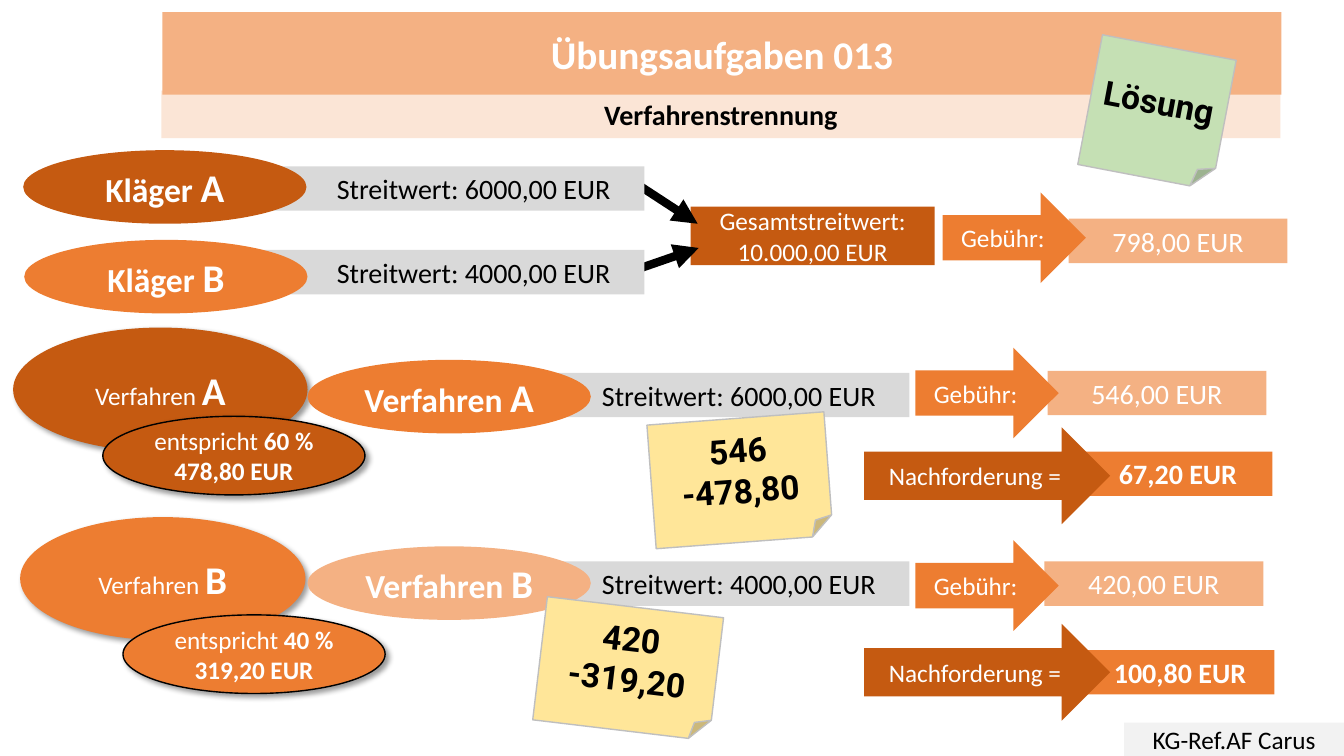
"""Builds the slide on separated proceedings: values in dispute, fees and additional claims."""
from pptx import Presentation
from pptx.dml.color import RGBColor
from pptx.enum.shapes import MSO_CONNECTOR as CONNECTOR, MSO_SHAPE as SHAPE
from pptx.enum.text import MSO_ANCHOR as ANCHOR, MSO_AUTO_SIZE as AUTO_SIZE, PP_ALIGN as ALIGN
from pptx.oxml import parse_xml
from pptx.oxml.ns import nsdecls
from pptx.util import Inches, Pt

CELL = Inches(0.1)
DARK = RGBColor(0xC5, 0x5A, 0x11)
ORANGE = RGBColor(0xED, 0x7D, 0x31)
LIGHT = RGBColor(0xF4, 0xB1, 0x83)
PALE = RGBColor(0xFB, 0xE5, 0xD6)
GREY = RGBColor(0xD9, 0xD9, 0xD9)
FOOTER = RGBColor(0xF2, 0xF2, 0xF2)
EDGE = RGBColor(0xBF, 0xBF, 0xBF)
GREEN = RGBColor(0xC5, 0xE0, 0xB4)
YELLOW = RGBColor(0xFF, 0xE6, 0x99)
WHITE = RGBColor(0xFF, 0xFF, 0xFF)
BLACK = RGBColor(0, 0, 0)


def cells(*counts):
    """Convert grid cells to lengths."""
    return [round(CELL * n) for n in counts]


def write(sp, lines, color, font="Calibri", align=ALIGN.CENTER):
    """Fill a shape with lines, each a list of (text, size, bold) runs."""
    tf = sp.text_frame
    tf.word_wrap = True
    tf.vertical_anchor = ANCHOR.MIDDLE
    for i, line in enumerate(lines):
        p = tf.add_paragraph() if i else tf.paragraphs[0]
        p.alignment = align
        for text, size, bold in line:
            r = p.add_run()
            r.text = text
            r.font.name = font
            r.font.size = Pt(size)
            r.font.bold = bold
            r.font.color.rgb = color


def add_box(s, kind, at, fill, lines, color=WHITE, edge=None, **style):
    """Add a filled shape with text."""
    sp = s.shapes.add_shape(kind, *cells(*at))
    sp.shadow.inherit = False
    sp.fill.solid()
    sp.fill.fore_color.rgb = fill
    if edge is None:
        sp.line.fill.background()
    else:
        sp.line.color.rgb = edge
        sp.line.width = Pt(1)
    write(sp, lines, color, **style)
    return sp


def add_title(s, text):
    """Turn the title placeholder into a rounded banner."""
    sp = s.shapes.title
    sp.left, sp.top, sp.width, sp.height = cells(16.1, 1.2, 111, 8.2)
    sp.fill.solid()
    sp.fill.fore_color.rgb = LIGHT
    sp.element.spPr.xfrm.addnext(parse_xml(
        f'<a:prstGeom {nsdecls("a")} prst="roundRect"><a:avLst/></a:prstGeom>'))
    write(sp, [[(text, 28, True)]], WHITE)
    sp.text_frame.auto_size = AUTO_SIZE.NONE
    s.shapes.element.append(sp.element)


def add_shadow(sp):
    """Give a shape a soft shadow to the lower right."""
    effects = sp.element.spPr.find("{*}effectLst")
    effects.append(parse_xml(
        f'<a:outerShdw {nsdecls("a")} blurRad="50800" dist="38100" dir="2700000" algn="tl" '
        'rotWithShape="0"><a:srgbClr val="000000"><a:alpha val="40000"/></a:srgbClr></a:outerShdw>'))


def add_arrow_line(s, *ends):
    """Add a thick black line with an arrowhead."""
    cx = s.shapes.add_connector(CONNECTOR.STRAIGHT, *cells(*ends))
    cx.line.color.rgb = BLACK
    cx.line.width = Pt(6)
    cx.line._get_or_add_ln().append(parse_xml(f'<a:tailEnd {nsdecls("a")} type="triangle"/>'))
    cx.element.spPr.append(parse_xml(f'<a:effectLst {nsdecls("a")}/>'))


def add_value_bar(s, x, y, amount):
    """Add a grey bar with a value in dispute."""
    sp = add_box(s, SHAPE.RECTANGLE, (x, y, 41.5, 4.4), GREY,
                 [[(f"Streitwert: {amount} EUR", 20, False)]], BLACK, align=ALIGN.LEFT)
    sp.text_frame.margin_left = Inches(1.1)


def add_party(s, x, y, fill, role, letter):
    """Add an oval naming a claimant or a proceeding."""
    add_box(s, SHAPE.FLOWCHART_CONNECTOR, (x, y, 28.1, 7.3), fill,
            [[(role + " ", 24, True), (letter, 28, True)]])


def add_fee(s, x, y, amount, amount_x, amount_y):
    """Add a fee arrow pointing into its amount."""
    add_box(s, SHAPE.RECTANGLE, (amount_x, amount_y, 21.7, 4.4), LIGHT,
            [[(f"{amount} EUR", 20, False)]])
    add_box(s, SHAPE.RIGHT_ARROW, (x, y, 14.2, 9), ORANGE, [[("Gebühr:", 18, False)]])


def add_claim(s, y, amount, amount_x, amount_y):
    """Add an additional claim arrow pointing into its amount."""
    add_box(s, SHAPE.RECTANGLE, (amount_x, amount_y, 18.7, 4.4), ORANGE,
            [[(f"{amount} EUR", 20, True)]])
    add_box(s, SHAPE.RIGHT_ARROW, (85.7, y, 24.4, 9.6), DARK, [[("Nachforderung =", 18, False)]])


def add_share(s, letter, fill, oval_at, share_at, percent, amount):
    """Add a proceeding oval with its share of the fee."""
    add_shadow(add_box(s, SHAPE.OVAL, oval_at, fill,
                       [[("Verfahren ", 18, False), (letter, 28, True)]]))
    add_shadow(add_box(s, SHAPE.OVAL, (*share_at, 26, 7.8), fill,
                       [[("entspricht ", 18, False), (percent, 18, True)],
                        [(f"{amount} EUR", 18, True)]], edge=BLACK))


def add_note(s, at, angle, fill, *lines):
    """Add a tilted sticky note."""
    sp = add_box(s, SHAPE.FOLDED_CORNER, at, fill, [[(line, 24, True)] for line in lines],
                 BLACK, EDGE, font="Roboto")
    sp.rotation = angle


def main():
    """Build and save the slide."""
    prs = Presentation()
    prs.slide_width, prs.slide_height = Inches(13.33), Inches(7.5)
    s = prs.slides.add_slide(prs.slide_layouts[5])

    add_box(s, SHAPE.RECTANGLE, (16, 9, 111, 4.7), PALE,
            [[("Verfahrenstrennung", 20, True)]], BLACK)
    add_title(s, "Übungsaufgaben 013")
    add_note(s, (108, 4.6, 13.5, 13.1), 10.8, GREEN, "Lösung")
    add_box(s, SHAPE.RECTANGLE, (111.5, 71.7, 21.8, 3.3), FOOTER,
            [[("KG-Ref.AF Carus", 18, False)]], BLACK)

    add_fee(s, 93.5, 19.1, "798,00", 106, 21.7)
    add_box(s, SHAPE.RECTANGLE, (68.5, 20.5, 24.2, 5.8), DARK,
            [[("Gesamtstreitwert:", 18, False)], [("10.000,00 EUR", 18, False)]])
    add_arrow_line(s, 61.7, 17.3, 69.2, 22.2)
    add_arrow_line(s, 61.5, 27.3, 69.3, 24.6)
    for letter, fill, x, y, bar_y, value in (
            ("A", DARK, 2.3, 14.9, 16.5, "6000,00"),
            ("B", ORANGE, 2.4, 23.8, 24.8, "4000,00")):
        add_value_bar(s, 22.4, bar_y, value)
        add_party(s, x, y, fill, "Kläger", letter)

    add_value_bar(s, 48.7, 37, "6000,00")
    add_value_bar(s, 48.7, 55.7, "4000,00")
    add_share(s, "A", DARK, (1.3, 32.5, 29.2, 12.3), (10.2, 41.3), "60 %", "478,80")
    add_share(s, "B", ORANGE, (2, 51.3, 28.3, 12.2), (12.2, 61), "40 %", "319,20")
    add_party(s, 30.5, 35.7, ORANGE, "Verfahren", "A")
    add_party(s, 30.5, 54.2, LIGHT, "Verfahren", "B")
    add_fee(s, 90.8, 34.5, "546,00", 103.9, 36.8)
    add_fee(s, 90.8, 53.6, "420,00", 103.6, 55.7)
    add_claim(s, 42.4, "67,20", 107.5, 44.8)
    add_claim(s, 61.9, "100,80", 107.7, 64.5)
    add_note(s, (64.6, 41.5, 17.6, 12.3), 355.7, YELLOW, "546", "-478,80")
    add_note(s, (53.5, 60.2, 17.6, 12.3), 6.8, YELLOW, "420", "-319,20")

    prs.save("out.pptx")


if __name__ == "__main__":
    main()
